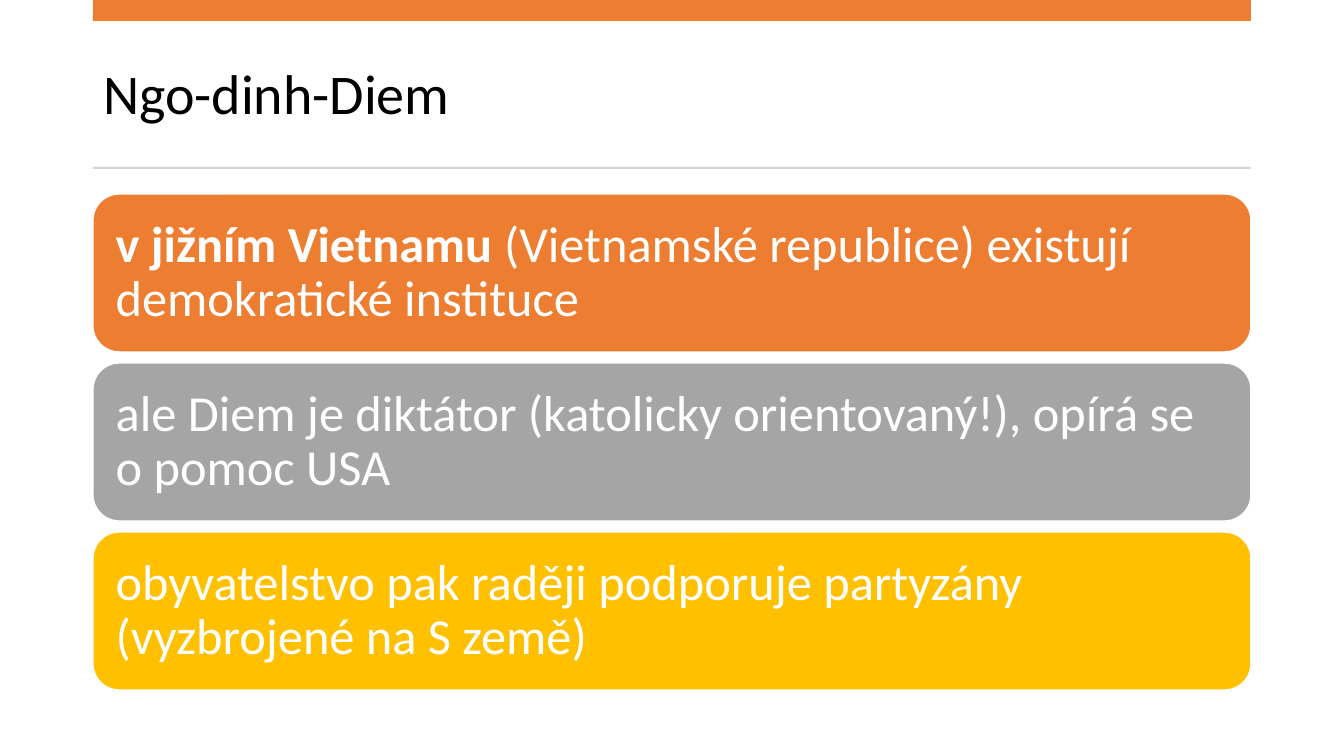
from pptx import Presentation
from pptx.dml.color import RGBColor
from pptx.enum.shapes import MSO_SHAPE
from pptx.enum.text import MSO_ANCHOR, PP_ALIGN
from pptx.util import Emu, Pt

SLIDE_WIDTH, SLIDE_HEIGHT = 1344, 756
EMU_PER_PX = 12192000 / SLIDE_WIDTH

BLACK = RGBColor(0x00, 0x00, 0x00)
WHITE = RGBColor(0xFF, 0xFF, 0xFF)
ORANGE = RGBColor(0xED, 0x7D, 0x31)
GRAY = RGBColor(0xA5, 0xA5, 0xA5)
LIGHT_GRAY = RGBColor(0xD5, 0xD5, 0xD5)
GOLD = RGBColor(0xFF, 0xC0, 0x00)

FONT = "Calibri"
LEFT, WIDTH = 93, 1158
CARD_TOP, CARD_HEIGHT, CARD_PITCH, CARD_INSET = 194, 158, 169, 15


def px(length):
    return Emu(round(length * EMU_PER_PX))


def add_block(slide, kind, top, height, color):
    """Add a filled shape spanning the content width, without line or shadow."""
    shape = slide.shapes.add_shape(kind, px(LEFT), px(top), px(WIDTH), px(height))
    shape.shadow.inherit = False
    shape.fill.solid()
    shape.fill.fore_color.rgb = color
    shape.line.fill.background()
    return shape


presentation = Presentation()
presentation.slide_width = px(SLIDE_WIDTH)
presentation.slide_height = px(SLIDE_HEIGHT)
slide = presentation.slides.add_slide(presentation.slide_layouts[5])

# Title
title = slide.shapes.title
title.left, title.top, title.width, title.height = px(LEFT), px(37), px(WIDTH), px(119)
title.text_frame.vertical_anchor = MSO_ANCHOR.MIDDLE
paragraph = title.text_frame.paragraphs[0]
paragraph.alignment = PP_ALIGN.LEFT
paragraph.line_spacing = 0.9
run = paragraph.add_run()
run.text = "Ngo-dinh-Diem"
run.font.name = FONT
run.font.size = Pt(40)
run.font.color.rgb = BLACK

# Top bar and divider
add_block(slide, MSO_SHAPE.RECTANGLE, 0, 21, ORANGE)
add_block(slide, MSO_SHAPE.RECTANGLE, 167, 2, LIGHT_GRAY)

# Cards: colour and runs of (text, bold)
cards = [
    (ORANGE, [("v jižním Vietnamu ", True),
              ("(Vietnamské republice) existují demokratické instituce", False)]),
    (GRAY, [("ale Diem je diktátor (katolicky orientovaný!), opírá se o pomoc USA", False)]),
    (GOLD, [("obyvatelstvo pak raději podporuje partyzány (vyzbrojené na S země)", False)]),
]
for index, (color, runs) in enumerate(cards):
    card = add_block(slide, MSO_SHAPE.ROUNDED_RECTANGLE,
                     CARD_TOP + index * CARD_PITCH, CARD_HEIGHT, color)
    card.line.color.rgb = WHITE
    card.line.width = Pt(1)
    frame = card.text_frame
    frame.word_wrap = True
    frame.vertical_anchor = MSO_ANCHOR.MIDDLE
    frame.margin_left = frame.margin_right = px(CARD_INSET)
    frame.margin_top = frame.margin_bottom = px(CARD_INSET)
    paragraph = frame.paragraphs[0]
    paragraph.alignment = PP_ALIGN.LEFT
    paragraph.line_spacing = 0.9
    for text, bold in runs:
        run = paragraph.add_run()
        run.text = text
        run.font.name = FONT
        run.font.size = Pt(36)
        run.font.bold = bold
        run.font.color.rgb = WHITE

presentation.save("out.pptx")
